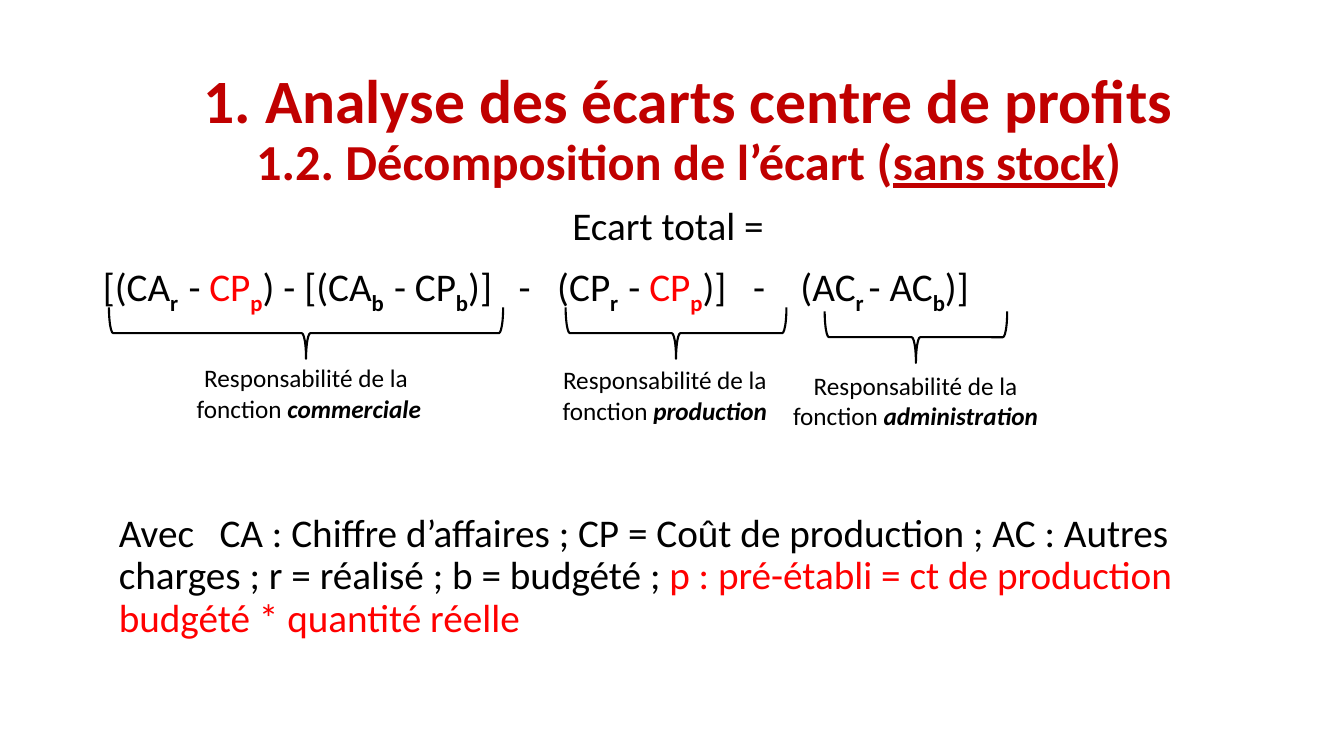
from lxml import etree
from pptx import Presentation, util as u
from pptx.dml.color import RGBColor
from pptx.enum import shapes, text
from pptx.oxml import ns

BLACK = RGBColor(0x00, 0x00, 0x00)
RED = RGBColor(0xFF, 0x00, 0x00)
DARK_RED = RGBColor(0xC0, 0x00, 0x00)

# The grid has 100 columns and 100 rows
WIDTH, HEIGHT = u.Inches(13.33), u.Inches(7.5)
COL, ROW = WIDTH / 100, HEIGHT / 100
TEXT_WIDTH = 86.27
BRACE_DEPTH = 6.8
LABEL_HEIGHT = 9.47

# Run formats
PLAIN = {}
SUB = {"bold": True, "baseline": -25000}
PRESET = {"color": RED}
PRESET_SUB = {**SUB, **PRESET}
FUNCTION = {"bold": True, "italic": True}

# Paragraph formats
SPACED = {"line_spacing": 0.9, "space_before": u.Pt(10)}
LEFT = {**SPACED, "alignment": text.PP_ALIGN.LEFT}
CENTERED = {**SPACED, "alignment": text.PP_ALIGN.CENTER}
TITLE = {"line_spacing": 0.9, "alignment": text.PP_ALIGN.CENTER}
LABEL = {"alignment": text.PP_ALIGN.CENTER}

FORMULA = [
    ("[(CA", PLAIN), ("r  ", SUB), ("- ", PLAIN),
    ("CP", PRESET), ("p", PRESET_SUB),
    (") - [(CA", PLAIN), ("b  ", SUB), ("- CP", PLAIN), ("b", SUB),
    (")]   -   (CP", PLAIN), ("r  ", SUB), ("- ", PLAIN),
    ("CP", PRESET), ("p", PRESET_SUB),
    (")]   -    (AC", PLAIN), ("r ", SUB), ("- AC", PLAIN), ("b", SUB),
    (")]", PLAIN),
]
LEGEND = [
    ("Avec \tCA : Chiffre d’affaires ; CP = Coût de production ; "
     "AC : Autres charges ; r = réalisé ; b = budgété ; ", PLAIN),
    ("p : pré-établi = ct de production budgété * quantité réelle", PRESET),
]

# Brace centre, row and span; label centre, row and width; label paragraphs
RESPONSIBILITIES = [
    ((22.77, 44.07, 29.33), (22.77, 47.33, 38.63),
     [[("Responsabilité de la", PLAIN)],
      [(" fonction ", PLAIN), ("commerciale", FUNCTION)]]),
    ((50.3, 44.07, 16.43), (49.47, 47.6, 19.28),
     [[("Responsabilité de la fonction ", PLAIN), ("production", FUNCTION)]]),
    ((68.15, 44.6, 13.58), (68.12, 48.27, 22.81),
     [[("Responsabilité de la fonction ", PLAIN),
       ("administration", FUNCTION)]]),
]


def grid_box(left, top, width, height):
    return [round(v) for v in
            (left * COL, top * ROW, width * COL, height * ROW)]


def place(placeholder, *cells):
    for side, value in zip(("left", "top", "width", "height"),
                           grid_box(*cells)):
        setattr(placeholder, side, value)


def add_run(paragraph, wording, size, color=BLACK, baseline=None, **formats):
    run = paragraph.add_run()
    run.text = wording
    settings = {"name": "Calibri", "size": u.Pt(size), "bold": False, **formats}
    for name, value in settings.items():
        setattr(run.font, name, value)
    run.font.color.rgb = color
    if baseline:
        run._r.get_or_add_rPr().set("baseline", str(baseline))


def write_paragraph(paragraph, runs, size, formats):
    for name, value in formats.items():
        setattr(paragraph, name, value)
    for wording, style in runs:
        add_run(paragraph, wording, **{"size": size, **style})


def remove_bullet(paragraph):
    properties = paragraph._p.get_or_add_pPr()
    properties.set("marL", "0")
    properties.set("indent", "0")
    etree.SubElement(properties, ns.qn("a:buNone"))


def write_title(title):
    place(title, 8.1, 7.6, TEXT_WIDTH, 19.33)
    frame = title.text_frame
    frame.auto_size = text.MSO_AUTO_SIZE.NONE
    frame.vertical_anchor = text.MSO_ANCHOR.MIDDLE
    heading = frame.paragraphs[0]
    style = {"color": DARK_RED, "bold": True}
    write_paragraph(heading, [("1. Analyse des écarts centre de profits", style)],
                    44, TITLE)
    heading.add_line_break()
    write_paragraph(heading, [
        ("1.2. Décomposition de l’écart (", style),
        ("sans stock", {**style, "underline": True}),
        (")", style)], 36, TITLE)


def write_formula(body):
    place(body, 6.9, 26.67, TEXT_WIDTH, 63.47)
    frame = body.text_frame
    frame.auto_size = text.MSO_AUTO_SIZE.NONE
    total, terms = frame.paragraphs[0], frame.add_paragraph()
    write_paragraph(total, [("Ecart total = ", PLAIN)], 28, CENTERED)
    write_paragraph(terms, FORMULA, 28, LEFT)
    for paragraph in (total, terms):
        remove_bullet(paragraph)


def add_text(slide, cells, paragraphs, size, formats):
    frame = slide.shapes.add_textbox(*grid_box(*cells)).text_frame
    frame.word_wrap = True
    for index, runs in enumerate(paragraphs):
        paragraph = frame.add_paragraph() if index else frame.paragraphs[0]
        write_paragraph(paragraph, runs, size, formats)


def add_brace(slide, center, row, span):
    # A quarter turn makes the height of the brace its visible span
    depth, length = BRACE_DEPTH * ROW, span * COL
    brace = slide.shapes.add_shape(
        shapes.MSO_SHAPE.RIGHT_BRACE,
        round(center * COL - depth / 2), round(row * ROW - length / 2),
        round(depth), round(length))
    brace.rotation = 90
    brace.shadow.inherit = False
    brace.fill.background()
    brace.line.color.rgb = BLACK
    brace.line.width = u.Pt(1.5)


def main():
    deck = Presentation()
    deck.slide_width, deck.slide_height = WIDTH, HEIGHT
    slide = deck.slides.add_slide(deck.slide_layouts[1])

    # Heading and formula
    write_title(slide.shapes.title)
    write_formula(slide.placeholders[1])

    # Who answers for each part of the formula
    for brace, (center, row, width), wording in RESPONSIBILITIES:
        add_brace(slide, *brace)
        add_text(slide, (center - width / 2, row, width, LABEL_HEIGHT),
                 wording, 18, LABEL)

    # Meaning of the symbols
    add_text(slide, (8.1, 67.3, TEXT_WIDTH, 20), [LEGEND], 28, LEFT)
    deck.save("out.pptx")


if __name__ == "__main__":
    main()
